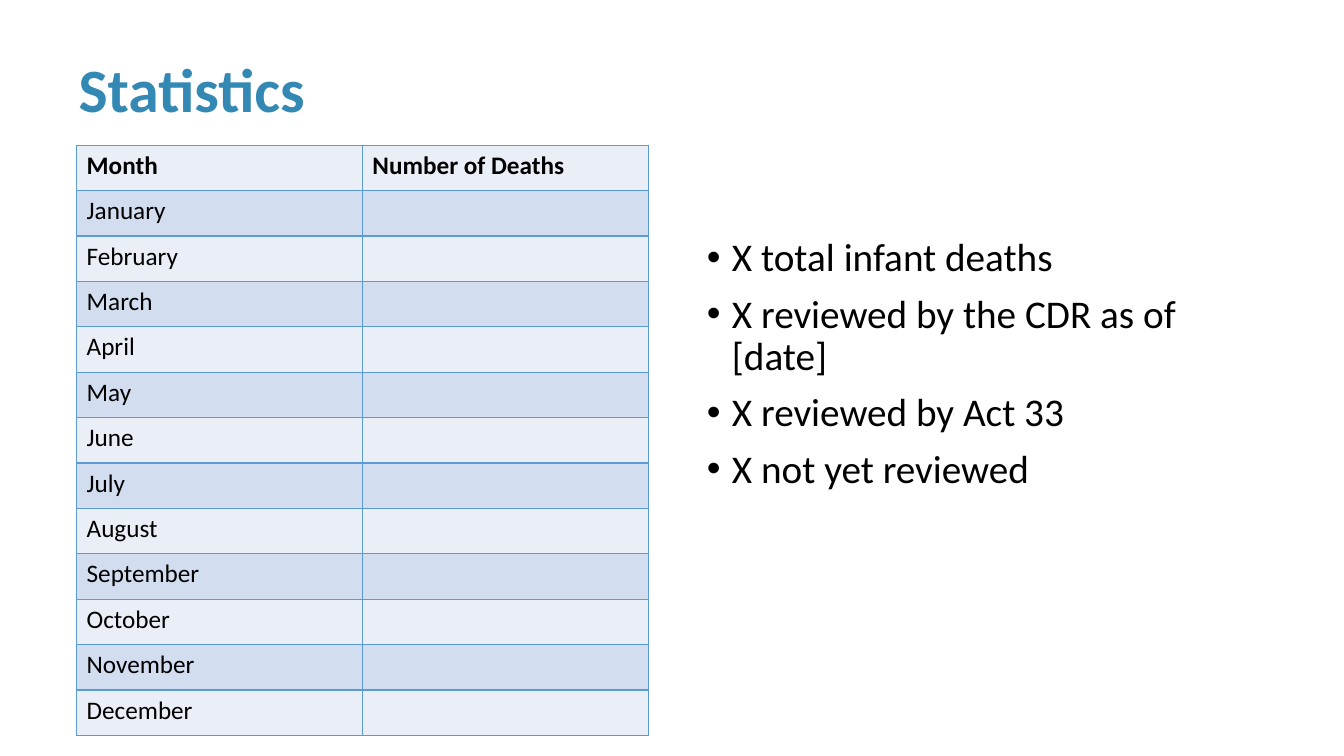
import pptx
import pptx.dml.color
import pptx.enum.text
import pptx.oxml
import pptx.oxml.ns
import pptx.util
from pptx.util import Inches

FONT = "Calibri"
BLACK, TITLE_BLUE, BORDER_BLUE = "000000", "3389B3", "5B9BD5"
BAND_FILLS = ("EAEFF7", "D2DEEF")
HEADINGS = ("Month", "Number of Deaths")
MONTHS = ("January", "February", "March", "April", "May", "June", "July",
          "August", "September", "October", "November", "December")
FINDINGS = ("X total infant deaths", "X reviewed by the CDR as of [date]",
            "X reviewed by Act 33", "X not yet reviewed")


def color(hex_value):
    return pptx.dml.color.RGBColor.from_string(hex_value)


def add_text(para, text, size, hex_value=BLACK, bold=False):
    span = para.add_run()
    span.text = text
    span.font.name = FONT
    span.font.size = pptx.util.Pt(size)
    span.font.bold = bold
    span.font.color.rgb = color(hex_value)


def place(box, left, top, width, height, anchor):
    box.left, box.top = Inches(left), Inches(top)
    box.width, box.height = Inches(width), Inches(height)
    frame = box.text_frame
    frame.word_wrap = True
    frame.auto_size = pptx.enum.text.MSO_AUTO_SIZE.NONE
    frame.vertical_anchor = anchor
    return frame


def fill_title(box, text):
    frame = place(box, 0.68, 0.19, 11.5, 1.45, pptx.enum.text.MSO_ANCHOR.MIDDLE)
    para = frame.paragraphs[0]
    para.alignment = pptx.enum.text.PP_ALIGN.LEFT
    para.line_spacing = 0.9
    add_text(para, text, 44, TITLE_BLUE, bold=True)


def fill_bullets(box, lines):
    frame = place(box, 6.91, 2.31, 5.67, 4.76, pptx.enum.text.MSO_ANCHOR.TOP)
    for index, line in enumerate(lines):
        para = frame.paragraphs[0] if index == 0 else frame.add_paragraph()
        para.line_spacing = 0.9
        para.space_before = pptx.util.Pt(10)
        # Hanging bullet
        properties = para._p.get_or_add_pPr()
        properties.set("marL", str(Inches(0.25)))
        properties.set("indent", str(-Inches(0.25)))
        for tag, name, value in (("buFont", "typeface", "Arial"), ("buChar", "char", "•")):
            bullet = pptx.oxml.parse_xml(
                f'<a:{tag} {pptx.oxml.ns.nsdecls("a")} {name}="{value}"/>')
            properties.append(bullet)
        add_text(para, line, 28)


def style_cell(cell, fill):
    properties = cell._tc.get_or_add_tcPr()
    for side in ("lnL", "lnR", "lnT", "lnB"):
        properties.append(pptx.oxml.parse_xml(
            f'<a:{side} {pptx.oxml.ns.nsdecls("a")} w="{pptx.util.Pt(1)}"><a:solidFill>'
            f'<a:srgbClr val="{BORDER_BLUE}"/></a:solidFill></a:{side}>'))
    cell.fill.solid()
    cell.fill.fore_color.rgb = color(fill)


def add_month_table(page):
    rows = [HEADINGS] + [(month, "") for month in MONTHS]
    table = page.shapes.add_table(len(rows), len(HEADINGS), Inches(0.76), Inches(1.44),
                                  Inches(5.67), Inches(5.86)).table
    for row_index, texts in enumerate(rows):
        for column_index, text in enumerate(texts):
            cell = table.cell(row_index, column_index)
            style_cell(cell, BAND_FILLS[row_index % 2])
            if text:
                add_text(cell.text_frame.paragraphs[0], text, 18, bold=row_index == 0)


def main():
    deck = pptx.Presentation()
    deck.slide_width, deck.slide_height = Inches(13.33), Inches(7.5)
    page = deck.slides.add_slide(deck.slide_layouts[1])
    # Title, monthly table on the left, findings on the right
    fill_title(page.shapes.title, "Statistics")
    add_month_table(page)
    fill_bullets(page.placeholders[1], FINDINGS)
    deck.save("out.pptx")


if __name__ == "__main__":
    main()
